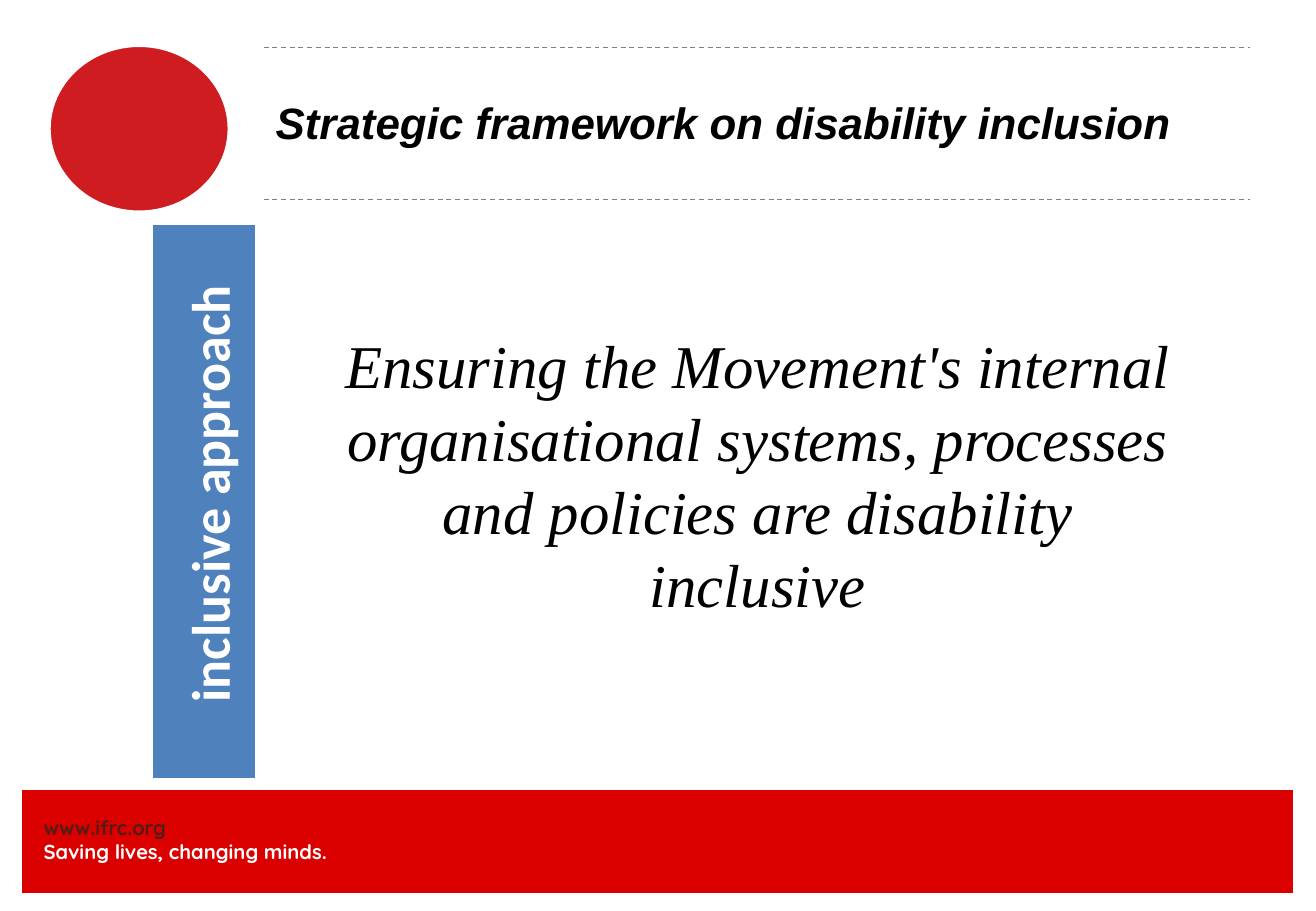
from lxml import etree
from pptx import Presentation
from pptx.dml.color import RGBColor
from pptx.enum import dml, shapes, text
from pptx.oxml.ns import qn
from pptx.util import Inches, Pt

HUES = {"red": "DB0000", "disc": "CF1C21", "blue": "4F81BD", "gray": "808080",
        "brown": "551C15", "black": "000000", "white": "FFFFFF"}

# Content: each line is (words, size, font, colour, bold, italic)
TITLE = [("Strategic framework on disability inclusion", 26, "Arial", "black", True, True)]
SIDE = [("inclusive approach", 32, "Calibri", "white", True, False)]
BODY = [("Ensuring the Movement's internal organisational systems, processes "
         "and policies are disability inclusive", 36, "Times New Roman", "black", False, True)]
FOOT = [("www.ifrc.org", 12, "Quicksand", "brown", True, False),
        ("Saving lives, changing minds.", 12, "Quicksand", "white", True, False)]

# Places: left, top, width, height
BAND = (0.18, 6.5, 10.47, 0.86)
DISC = (0.4, 0.37, 1.49, 1.38)
BAR = (-0.61, 3.69, 4.58, 0.87)
HEAD = (2.17, 0.38, 8.12, 1.25)
MAIN = (2.74, 2.65, 6.99, 2.52)
NOTE = (0.36, 6.71, 3.7, 0.4)
RULES = (0.39, 1.64)

deck = Presentation()
deck.slide_width, deck.slide_height = Inches(10.83), Inches(7.5)
slide = deck.slides.add_slide(deck.slide_layouts[6])


def hue(name):
    return RGBColor.from_string(HUES[name])


def add_block(kind, place, fill, width):
    block = slide.shapes.add_shape(kind, *map(Inches, place))
    block.shadow.inherit = False
    block.fill.solid()
    block.fill.fore_color.rgb = hue(fill)
    block.line.color.rgb = hue("white")
    block.line.width = Pt(width)
    return block


def add_rule(y):
    left, _, width, _ = HEAD
    rule = slide.shapes.add_connector(shapes.MSO_CONNECTOR.STRAIGHT, Inches(left), Inches(y),
                                      Inches(left + width), Inches(y))
    rule.line.color.rgb = hue("gray")
    rule.line.width = Pt(0.75)
    rule.line.dash_style = dml.MSO_LINE.DASH
    etree.SubElement(rule._element.spPr, qn("a:effectLst"))


def write(shape, lines, align, anchor, pads):
    frame = shape.text_frame
    frame.word_wrap = True
    frame.vertical_anchor = anchor
    (frame.margin_left, frame.margin_top,
     frame.margin_right, frame.margin_bottom) = map(Inches, pads)
    for i, (words, size, face, tint, bold, slant) in enumerate(lines):
        para = frame.add_paragraph() if i else frame.paragraphs[0]
        para.alignment = align
        run = para.add_run()
        run.text = words
        font = run.font
        font.size, font.name, font.bold, font.italic = Pt(size), face, bold, slant
        font.color.rgb = hue(tint)


def add_text(place, *args):
    write(slide.shapes.add_textbox(*map(Inches, place)), *args)


LEFT, MID = text.PP_ALIGN.LEFT, text.PP_ALIGN.CENTER
TOP, HALF = text.MSO_ANCHOR.TOP, text.MSO_ANCHOR.MIDDLE
PADS = (0.1, 0.05, 0.1, 0.05)

# Footer band
add_block(shapes.MSO_SHAPE.RECTANGLE, BAND, "red", 0.75)
add_text(NOTE, FOOT, LEFT, TOP, (0, 0, 0, 0))

# Disc and title between two dashed rules
add_block(shapes.MSO_SHAPE.OVAL, DISC, "disc", 2.5)
for y in RULES:
    add_rule(y)
add_text(HEAD, TITLE, LEFT, HALF, PADS)

# Upright side bar
bar = add_block(shapes.MSO_SHAPE.RECTANGLE, BAR, "blue", 2)
bar.rotation = 270
write(bar, SIDE, MID, HALF, (0.15, 0.1, 0.03, 0.03))

# Main statement
add_text(MAIN, BODY, MID, TOP, PADS)

deck.save("out.pptx")
